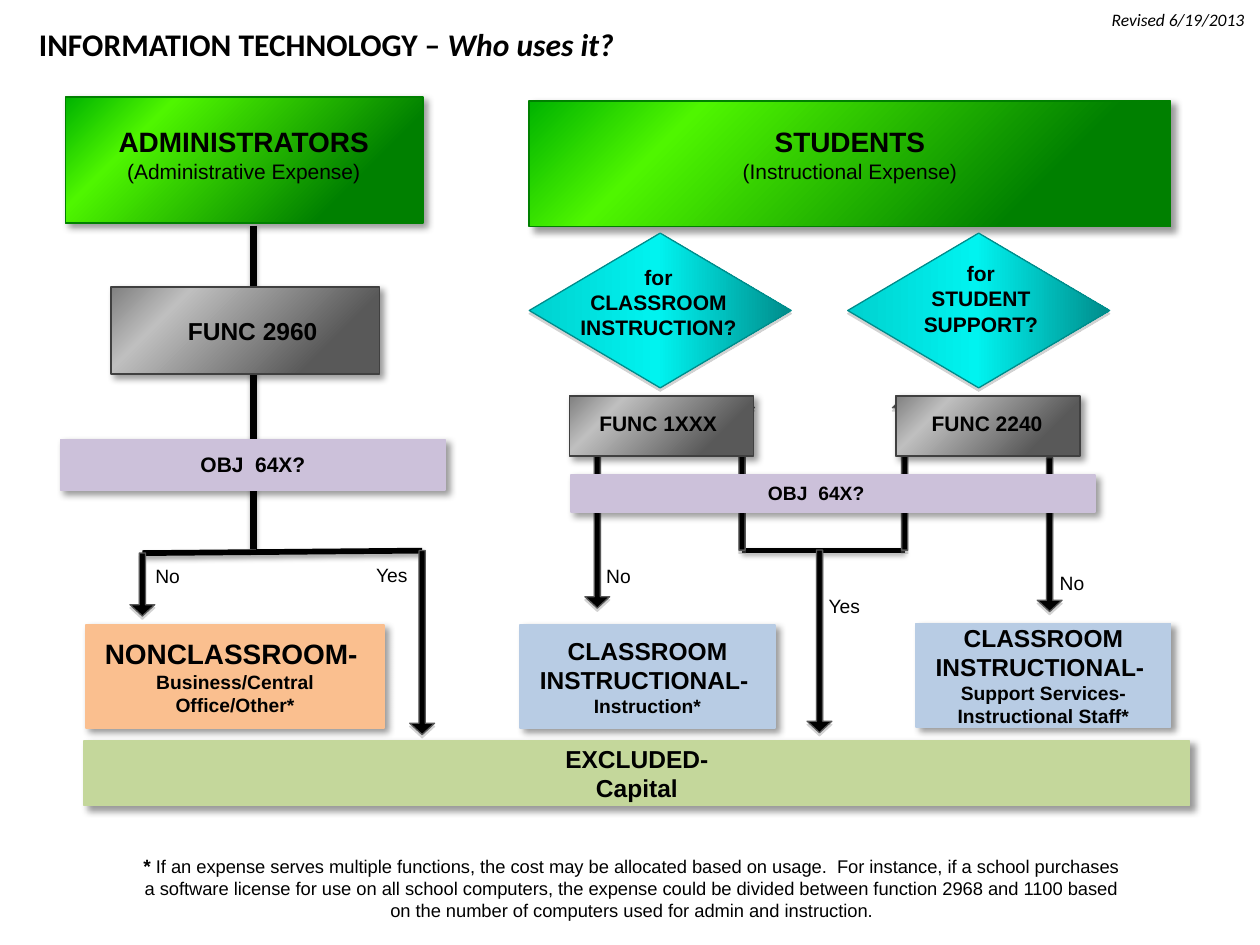
import copy
import lxml.etree
import pptx
import pptx.dml.color
import pptx.enum.shapes
import pptx.enum.text
import pptx.oxml.ns
import pptx.util

Cm, Pt = pptx.util.Cm, pptx.util.Pt
RGB = pptx.dml.color.RGBColor.from_string
SHAPE = pptx.enum.shapes.MSO_SHAPE
ALIGN = pptx.enum.text.PP_ALIGN
ANCHOR = pptx.enum.text.MSO_ANCHOR
qn = pptx.oxml.ns.qn

COLORS = {
    "black": "000000", "shadow": "808080", "arrow_edge": "595959",
    "green_edge": "008000", "gray_edge": "404040", "cyan_edge": "008C8B",
    "lilac": "CCC1DA", "orange": "FABF8F", "blue": "B8CCE4", "olive": "C4D79B",
}
GRADIENTS = {
    "green": (135, [(0.22, "008000"), (0.77, "4FF600"), (1, "00B300")]),
    "gray": (135, [(0.22, "595959"), (0.77, "BFBFBF"), (1, "808080")]),
    "cyan": (0, [(0, "00D1CF"), (0.49, "00F3F0"), (1, "008C8B")]),
}


def add_text(tf, text, size=12, bold=True, italic=False, font="Arial",
             align=ALIGN.CENTER, same_line=False):
    p = tf.paragraphs[-1] if same_line or not tf.text else tf.add_paragraph()
    p.alignment = align
    r = p.add_run()
    r.text = text
    r.font.name = font
    r.font.size = Pt(size)
    r.font.bold = bold
    r.font.italic = italic
    r.font.color.rgb = RGB(COLORS["black"])


def add_shadow(sp, color, alpha, blur, dist, angle):
    effects = lxml.etree.SubElement(sp._element.spPr, qn("a:effectLst"))
    outer = lxml.etree.SubElement(
        effects, qn("a:outerShdw"), blurRad=str(Pt(blur)), dist=str(Pt(dist)),
        dir=str(angle * 60000), algn="ctr", rotWithShape="0")
    clr = lxml.etree.SubElement(outer, qn("a:srgbClr"), val=COLORS[color])
    lxml.etree.SubElement(clr, qn("a:alpha"), val=str(alpha * 1000))


prs = pptx.Presentation()
prs.slide_width, prs.slide_height = Cm(25.4), Cm(19.05)
s = prs.slides.add_slide(prs.slide_layouts[5])

title = s.shapes.title
title.left, title.top, title.width, title.height = Cm(0.53), Cm(0.38), Cm(23.88), Cm(1.02)
tf = title.text_frame
tf.auto_size = pptx.enum.text.MSO_AUTO_SIZE.NONE
tf.vertical_anchor = ANCHOR.TOP
add_text(tf, "INFORMATION TECHNOLOGY – ", size=18, font="Calibri", align=ALIGN.LEFT)
add_text(tf, "Who uses it?", size=18, italic=True, font="Calibri",
         align=ALIGN.LEFT, same_line=True)

lines = [
    (5.11, 4.55, 5.11, 11.07, 3.5),
    (14.96, 11.1, 18.24, 11.1, 2.5),
    (2.87, 11.15, 8.51, 11.1, 3.25),
]
for x1, y1, x2, y2, weight in lines:
    line = s.shapes.add_connector(pptx.enum.shapes.MSO_CONNECTOR.STRAIGHT,
                                  Cm(x1), Cm(y1), Cm(x2), Cm(y2))
    line.line.color.rgb = RGB(COLORS["black"])
    line.line.width = Pt(weight)
    add_shadow(line, "black", 38, 3.1, 1.6, 90)

arrows = [
    (2.87, 11.15, 1.27, 90), (8.51, 11.1, 3.71, 90), (12.04, 9.16, 3.1, 90),
    (14.96, 7.99, 3.1, 270), (16.52, 11.09, 3.68, 90),
    (18.24, 7.99, 3.1, 270), (21.16, 9.23, 3.1, 90),
]
thickness = 0.5
for x, top, length, rotation in arrows:
    arrow = s.shapes.add_shape(
        SHAPE.RIGHT_ARROW, Cm(x - length / 2), Cm(top + (length - thickness) / 2),
        Cm(length), Cm(thickness))
    arrow.rotation = rotation
    arrow.adjustments[0], arrow.adjustments[1] = 0.25, 0.46
    arrow.fill.solid()
    arrow.fill.fore_color.rgb = RGB(COLORS["black"])
    arrow.line.color.rgb = RGB(COLORS["arrow_edge"])
    arrow.line.width = Pt(0.75)
    add_shadow(arrow, "shadow", 35, 0, 1.8, 90)

boxes = [
    (1.32, 1.96, 7.21, 2.54, "green", []),
    (10.67, 2.03, 12.93, 2.54, "green", []),
    (2.24, 5.79, 5.41, 1.75, "gray", []),
    (10.67, 4.7, 5.28, 3.12, "cyan", []),
    (17.09, 4.7, 5.28, 3.12, "cyan", []),
    (1.22, 8.86, 7.75, 1.02, "lilac", []),
    (11.51, 9.58, 10.57, 0.74, "lilac", []),
    (11.48, 7.98, 3.71, 1.22, "gray", []),
    (18.06, 7.98, 3.71, 1.22, "gray", []),
    (1.73, 12.6, 6.02, 2.08, "orange",
     [("NONCLASSROOM- ", 16), ("Business/Central Office/Other*", 11)]),
    (10.49, 12.6, 5.13, 2.08, "blue",
     [("CLASSROOM INSTRUCTIONAL- ", 14), ("Instruction*", 11)]),
    (18.47, 12.57, 5.13, 2.08, "blue",
     [("CLASSROOM INSTRUCTIONAL- ", 14), ("Support Services-Instructional Staff*", 11)]),
    (1.7, 14.94, 22.28, 1.3, "olive", [("EXCLUDED-", 14), ("Capital", 14)]),
]
for x, y, w, h, color, texts in boxes:
    diamond = color == "cyan"
    sp = s.shapes.add_shape(SHAPE.DIAMOND if diamond else SHAPE.RECTANGLE,
                            Cm(x), Cm(y), Cm(w), Cm(h))
    if color in GRADIENTS:
        angle, stops = GRADIENTS[color]
        sp.fill.gradient()
        sp.fill.gradient_angle = angle
        stop_list = sp._element.spPr.find(".//" + qn("a:gsLst"))
        stop_list.append(copy.deepcopy(stop_list[0]))
        for stop, (position, stop_color) in zip(sp.fill.gradient_stops, stops):
            stop.position = position
            stop.color.rgb = RGB(stop_color)
    else:
        sp.fill.solid()
        sp.fill.fore_color.rgb = RGB(COLORS[color])
    sp.line.color.rgb = RGB(COLORS.get(color + "_edge", COLORS.get(color)))
    sp.line.width = Pt(0.75 if diamond else 1)
    if diamond:
        add_shadow(sp, "shadow", 35, 0, 1.8, 90)
    else:
        add_shadow(sp, "black", 40, 4, 3, 45)
    sp.text_frame.vertical_anchor = ANCHOR.MIDDLE
    for text, size in texts:
        add_text(sp.text_frame, text, size=size)

labels = [
    (1.42, 2.39, 6.99, 1.45,
     [("ADMINISTRATORS", 16, True), ("(Administrative Expense)", 12, False)]),
    (13.64, 2.39, 6.99, 1.45,
     [("STUDENTS", 16, True), ("(Instructional Expense)", 12, False)]),
    (3.38, 6.25, 3.43, 0.86, [("FUNC 2960", 14, True)]),
    (11.28, 5.21, 3.99, 1.8, [("for", 12, True), ("CLASSROOM INSTRUCTION?", 12, True)]),
    (17.78, 5.13, 3.99, 1.8, [("for", 12, True), ("STUDENT SUPPORT?", 12, True)]),
    (11.76, 8.15, 3.02, 0.76, [("FUNC 1XXX", 12, True)]),
    (18.39, 8.15, 3.02, 0.76, [("FUNC 2240", 12, True)]),
    (3.78, 8.97, 2.64, 0.76, [("OBJ  64X? ", 12, True)]),
    (15.19, 9.58, 2.64, 0.74, [("OBJ  64X? ", 11, True)]),
    (2.67, 11.25, 1.42, 0.74, [("No", 11, False)]),
    (7.19, 11.23, 1.42, 0.74, [("Yes", 11, False)]),
    (11.76, 11.25, 1.42, 0.74, [("No", 11, False)]),
    (16.31, 11.86, 1.42, 0.74, [("Yes", 11, False)]),
    (20.9, 11.4, 1.42, 0.74, [("No", 11, False)]),
]
for x, y, w, h, texts in labels:
    tf = s.shapes.add_textbox(Cm(x), Cm(y), Cm(w), Cm(h)).text_frame
    tf.word_wrap = len(texts) > 1
    for text, size, bold in texts:
        add_text(tf, text, size=size, bold=bold)

tf = s.shapes.add_textbox(Cm(2.62), Cm(17.09), Cm(20.24), Cm(1.63)).text_frame
tf.word_wrap = True
add_text(tf, "*", size=11)
add_text(tf, " If an expense serves multiple functions, the cost may be allocated based on usage.  "
         "For instance, if a school purchases a software license for use on all school computers, "
         "the expense could be divided between function 2968 and 1100 based on the number of "
         "computers used for admin and instruction.", size=10.5, bold=False, same_line=True)

tf = s.shapes.add_textbox(Cm(19.41), Cm(0.05), Cm(5.92), Cm(1.02)).text_frame
tf.word_wrap = True
add_text(tf, "Revised 6/19/2013", size=10, bold=False, italic=True, font="Calibri",
         align=ALIGN.RIGHT)

prs.save("out.pptx")
